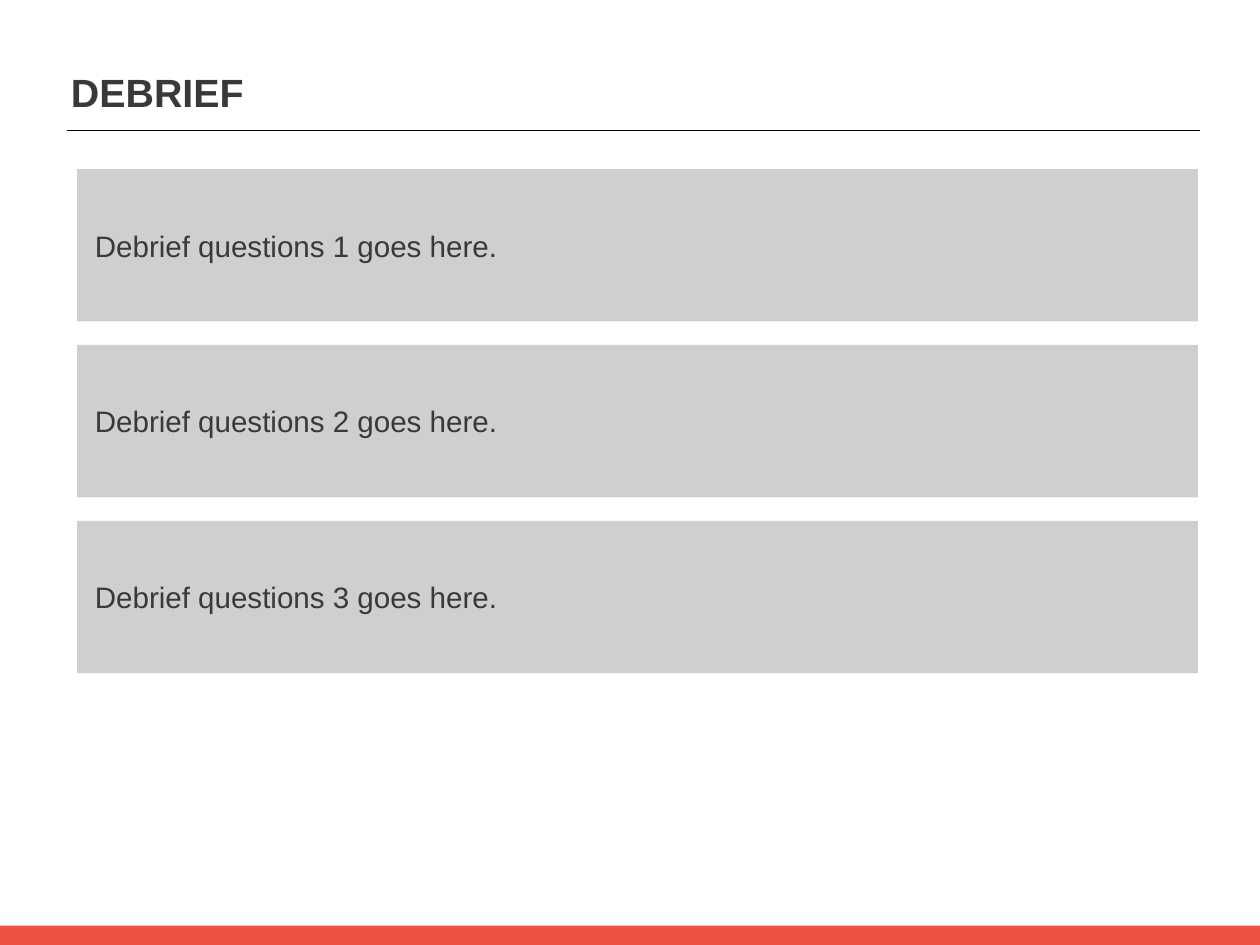
from dataclasses import dataclass
from lxml.etree import SubElement
from pptx import Presentation
from pptx.dml.color import RGBColor
from pptx.enum.shapes import MSO_CONNECTOR, MSO_SHAPE
from pptx.enum.text import MSO_ANCHOR, PP_ALIGN
from pptx.oxml.ns import qn
from pptx.util import Inches, Pt

TITLE = "DEBRIEF"
QUESTIONS = [
    "Debrief questions 1 goes here.",
    "Debrief questions 2 goes here.",
    "Debrief questions 3 goes here.",
]

WIDE, HIGH = 14.22, 10.67
LEFT, TOP = 0.87, 1.91
CARD_W, CARD_H, GAP = 12.65, 1.72, 0.265
RULE = (0.76, 1.47, 13.54, 1.47)
FOOT = 0.22


@dataclass(frozen=True)
class Theme:
    font: str = "Arial"
    ink: str = "3B3838"
    card: str = "D0CECE"
    foot: str = "ED5340"
    rule: str = "000000"
    title: int = 32
    body: int = 24


THEME = Theme()


def color(code):
    return RGBColor.from_string(code)


def write(frame, text, size, bold=False):
    para = frame.paragraphs[0]
    para.alignment = PP_ALIGN.LEFT
    run = para.add_run()
    run.text = text
    font = run.font
    font.name, font.size, font.bold = THEME.font, Pt(size), bold
    font.color.rgb = color(THEME.ink)


def add_block(slide, left, top, width, height, fill):
    box = slide.shapes.add_shape(
        MSO_SHAPE.RECTANGLE, *map(Inches, (left, top, width, height)))
    box.shadow.inherit = False
    box.fill.solid()
    box.fill.fore_color.rgb = color(fill)
    box.line.fill.background()
    return box


def add_rule(slide):
    line = slide.shapes.add_connector(
        MSO_CONNECTOR.STRAIGHT, *map(Inches, RULE))
    line.line.color.rgb = color(THEME.rule)
    line.line.width = Pt(1)
    SubElement(line._element.spPr, qn("a:effectLst"))


def add_title(slide):
    head = slide.shapes.title
    head.left, head.top, head.width, head.height = map(
        Inches, (0.7, 0.72, 7.47, 0.64))
    frame = head.text_frame
    frame.word_wrap = True
    frame.vertical_anchor = MSO_ANCHOR.TOP
    write(frame, TITLE, THEME.title, bold=True)


def add_card(slide, row, text):
    top = TOP + row * (CARD_H + GAP)
    frame = add_block(
        slide, LEFT, top, CARD_W, CARD_H, THEME.card).text_frame
    frame.word_wrap = True
    frame.vertical_anchor = MSO_ANCHOR.MIDDLE
    frame.margin_left = frame.margin_right = Inches(0.2)
    frame.margin_top = frame.margin_bottom = Inches(0.1)
    write(frame, text, THEME.body)


def main():
    deck = Presentation()
    deck.slide_width, deck.slide_height = Inches(WIDE), Inches(HIGH)
    slide = deck.slides.add_slide(deck.slide_layouts.get_by_name("Title Only"))
    add_block(slide, 0, HIGH - FOOT, WIDE, FOOT, THEME.foot)
    add_rule(slide)
    add_title(slide)
    for row, text in enumerate(QUESTIONS):
        add_card(slide, row, text)
    deck.save("out.pptx")


if __name__ == "__main__":
    main()
